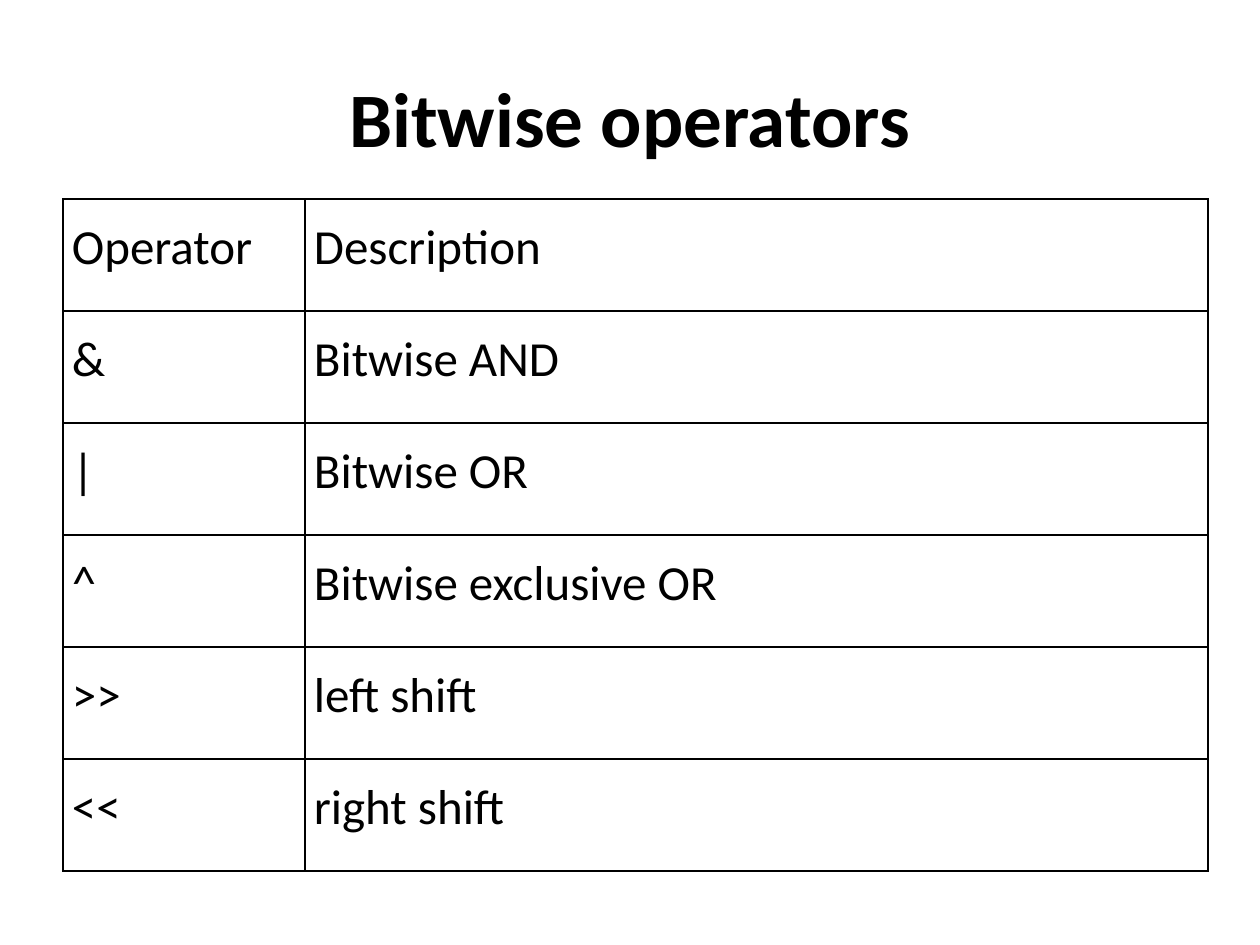
from lxml import etree
from pptx import Presentation
from pptx import util as u
from pptx.dml.color import RGBColor
from pptx.enum import text
from pptx.oxml.ns import qn

SCALE = 914400 / 126
INK = {"text": "000000", "line": "000000"}
ROWS = [
    ("Operator", "Description"),
    ("&", "Bitwise AND"),
    ("|", "Bitwise OR"),
    ("^", "Bitwise exclusive OR"),
    (">>", "left shift"),
    ("<<", "right shift"),
]
WIDTHS = (242, 903)
HIGH = 112


def px(n):
    return u.Emu(round(n * SCALE))


def add_run(para, words, size, bold=False):
    run = para.add_run()
    run.text = words
    font = run.font
    font.name, font.size, font.bold = "Calibri", u.Pt(size), bold
    font.color.rgb = RGBColor.from_string(INK["text"])


prs = Presentation()
prs.slide_width, prs.slide_height = px(1260), px(945)
slide = prs.slides.add_slide(prs.slide_layouts[6])

# Title
title = slide.shapes.add_textbox(px(63), px(38), px(1134), px(157)).text_frame
title.word_wrap = True
title.vertical_anchor = text.MSO_ANCHOR.MIDDLE
head = title.paragraphs[0]
head.alignment = text.PP_ALIGN.CENTER
add_run(head, "Bitwise operators", 44, True)

# Operator table
table = slide.shapes.add_table(
    len(ROWS), len(WIDTHS), px(63), px(199), px(sum(WIDTHS)), px(HIGH * len(ROWS))
).table
table.first_row = table.horz_banding = False
for col, wide in zip(table.columns, WIDTHS):
    col.width = px(wide)

for r, row in enumerate(ROWS):
    table.rows[r].height = px(HIGH)
    for c, words in enumerate(row):
        cell = table.cell(r, c)
        cell.margin_left = cell.margin_right = px(9)
        cell.margin_top, cell.margin_bottom = u.Pt(30), 0
        para = cell.text_frame.paragraphs[0]
        para.line_spacing = para.space_after = u.Pt(15)
        add_run(para, words, 28)

        # Borders come before the fill in the cell properties
        props = cell._tc.get_or_add_tcPr()
        for side in ("lnL", "lnR", "lnT", "lnB"):
            line = etree.SubElement(props, qn(f"a:{side}"), w=str(u.Pt(1)))
            fill = etree.SubElement(line, qn("a:solidFill"))
            etree.SubElement(fill, qn("a:srgbClr"), val=INK["line"])
        cell.fill.background()

prs.save("out.pptx")
